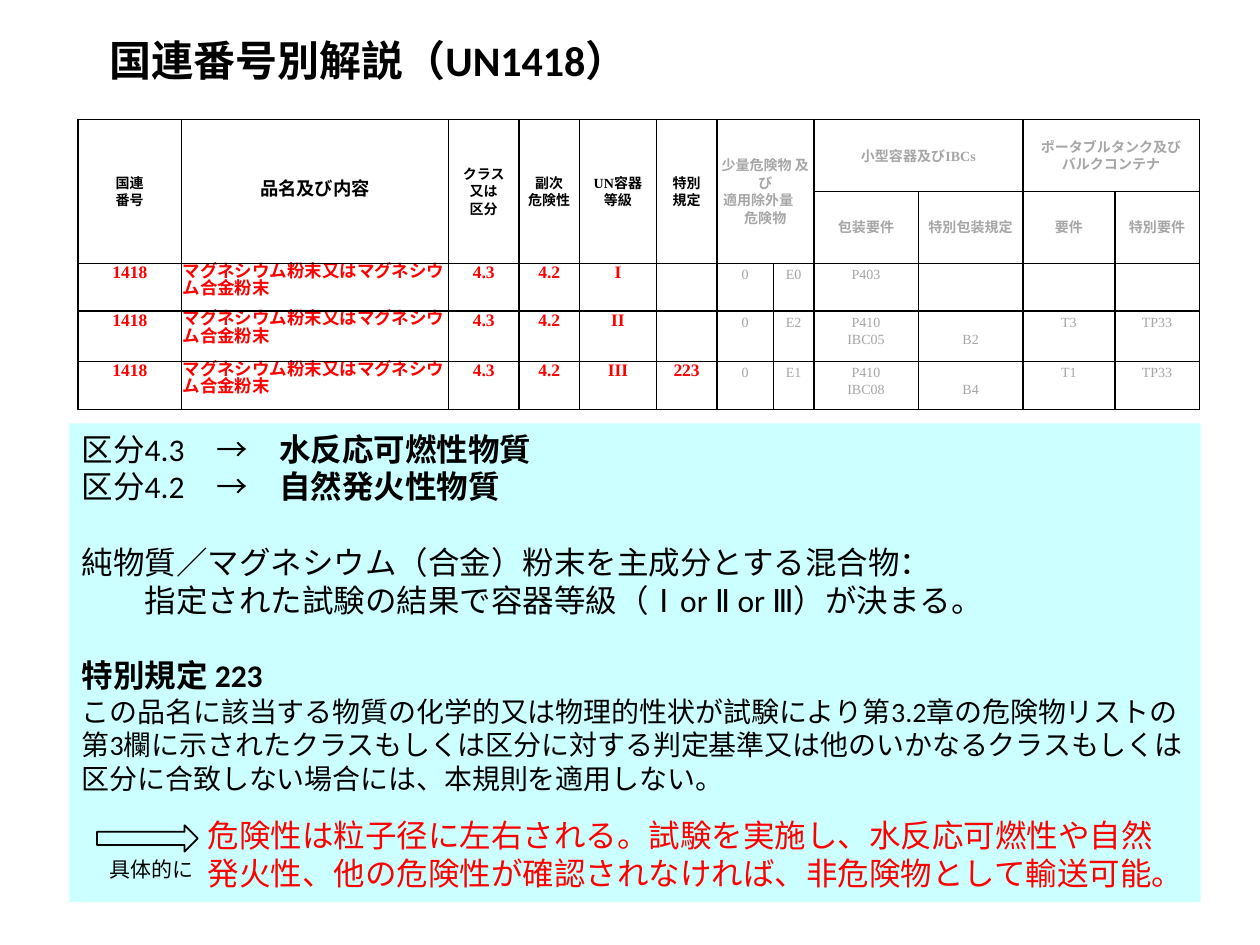
from dataclasses import dataclass

from lxml import etree
from pptx import Presentation
from pptx import util as u
from pptx.dml import color
from pptx.enum import shapes, text
from pptx.oxml import ns

COLORS = {"black": "000000", "grey": "A6A6A6", "red": "FF0000", "panel": "CCFFFF"}
SLIDE_WIDTH, SLIDE_HEIGHT = u.Inches(10), u.Inches(7.5)
LINE_PITCH = 21.6

# Percent of the slide's width and height
COLUMNS = [8.2, 21.2, 5.6, 4.8, 6.1, 4.8, 4.5, 3.2, 8.3, 8.3, 7.3, 6.7]
ROWS = [7.6, 7.6, 5.07, 5.33, 5.07]


@dataclass(frozen=True)
class Box:
    """Position and size in percent of the slide."""
    left: float
    top: float
    width: float
    height: float

    def lengths(self) -> tuple:
        return (across(self.left), down(self.top), across(self.width), down(self.height))


@dataclass(frozen=True)
class Style:
    size: float
    color: str = "black"
    bold: bool = False
    font: str = "Calibri"


@dataclass(frozen=True)
class Header:
    row: int
    column: int
    lines: tuple
    rows: int = 1
    columns: int = 1
    color: str = "black"
    size: float = 8
    before: float = 0
    after: float = 0


@dataclass(frozen=True)
class Line:
    """One paragraph of the panel, as (wording, style) runs."""
    runs: tuple
    indent: int = 0  # in full-width characters of 18 points
    before: float = 0
    after: float = 0


HEADERS = [
    Header(0, 0, ("国連", "番号"), rows=2),
    Header(0, 1, ("品名及び内容",), rows=2, size=10.5, before=2, after=3),
    Header(0, 2, ("クラス", "又は", "区分"), rows=2),
    Header(0, 3, ("副次", "危険性"), rows=2),
    Header(0, 4, ("UN容器", "等級"), rows=2),
    Header(0, 5, ("特別", "規定"), rows=2),
    Header(0, 6, ("少量危険物 及び", "適用除外量　危険物"), rows=2, columns=2, color="grey"),
    Header(0, 8, ("小型容器及びIBCs",), columns=2, color="grey"),
    Header(0, 10, ("ポータブルタンク及び", "バルクコンテナ"), columns=2, color="grey"),
] + [
    Header(1, column, (label,), color="grey")
    for column, label in enumerate(("包装要件", "特別包装規定", "要件", "特別要件"), start=8)
]

SUBSTANCE = ("1418", "マグネシウム粉末又はマグネシウム合金粉末", "4.3", "4.2")
ENTRIES = [
    SUBSTANCE + ("I", "", "0", "E0", "P403", "", "", ""),
    SUBSTANCE + ("II", "", "0", "E2", "P410\nIBC05", "\nB2", "T3", "TP33"),
    SUBSTANCE + ("III", "223", "0", "E1", "P410\nIBC08", "\nB4", "T1", "TP33"),
]
NAME_COLUMN, FIRST_GREY_COLUMN = 1, 6

PLAIN, STRONG = Style(18), Style(18, bold=True)
RED, SMALLER = Style(18, "red"), Style(16)
PANEL_LINES = [
    Line((("区分4.3　→　", PLAIN), ("水反応可燃性物質", STRONG))),
    Line((("区分4.2　→　", PLAIN), ("自然発火性物質", STRONG))),
    Line((("純物質／マグネシウム（合金）粉末を主成分とする混合物：", PLAIN),), before=LINE_PITCH),
    Line((("指定された試験の結果で容器等級（Ⅰor Ⅱ or Ⅲ）が決まる。", PLAIN),), indent=2),
    Line((("特別規定 223", STRONG),), before=LINE_PITCH),
    Line((("この品名に該当する物質の化学的又は物理的性状が試験により第3.2章の危険物リスト"
           "の第3欄に示されたクラスもしくは区分に対する判定基準又は他のいかなるクラスもし"
           "くは区分に合致しない場合には、本規則を適用しない。", SMALLER),), after=12),
    Line((("危険性は粒子径に左右される。試験を実施し、水反応可燃性や自然", RED),), indent=4),
    Line((("発火性、他の危険性が確認されなければ、非危険物として輸送可能。", RED),), indent=4),
]


def across(percent: float) -> int:
    return round(SLIDE_WIDTH * percent / 100)


def down(percent: float) -> int:
    return round(SLIDE_HEIGHT * percent / 100)


def rgb(name: str) -> color.RGBColor:
    return color.RGBColor.from_string(COLORS[name])


def add_run(paragraph, wording: str, style: Style) -> None:
    for index, part in enumerate(wording.split("\n")):
        if index:
            paragraph.add_line_break()
        if part:
            run = paragraph.add_run()
            run.text = part
            run.font.name, run.font.size = style.font, u.Pt(style.size)
            run.font.bold = style.bold
            run.font.color.rgb = rgb(style.color)


def next_paragraph(frame, index: int):
    return frame.add_paragraph() if index else frame.paragraphs[0]


def prepare_cell(cell) -> None:
    """Set black borders, no fill and narrow margins."""
    properties = cell._tc.get_or_add_tcPr()
    for side in ("lnL", "lnR", "lnT", "lnB"):
        border = etree.SubElement(properties, ns.qn(f"a:{side}"), w=str(u.Pt(1)))
        fill = etree.SubElement(border, ns.qn("a:solidFill"))
        etree.SubElement(fill, ns.qn("a:srgbClr"), val=COLORS["black"])
    cell.fill.background()
    cell.margin_left = cell.margin_right = cell.margin_top = u.Inches(0.01)
    cell.margin_bottom = 0


def write_cell(cell, lines: tuple, style: Style, align=text.PP_ALIGN.CENTER,
               before: float = 0, after: float = 0) -> None:
    for index, wording in enumerate(lines):
        paragraph = next_paragraph(cell.text_frame, index)
        paragraph.alignment = align
        paragraph.line_spacing = u.Pt(10)
        paragraph.space_before, paragraph.space_after = u.Pt(before), u.Pt(after)
        add_run(paragraph, wording, style)


def add_substance_table(slide) -> None:
    box = Box(6.2, 12.67, sum(COLUMNS), sum(ROWS))
    table = slide.shapes.add_table(len(ROWS), len(COLUMNS), *box.lengths()).table
    table.first_row = table.horz_banding = False
    for column, width in zip(table.columns, COLUMNS):
        column.width = across(width)
    for row, height in zip(table.rows, ROWS):
        row.height = down(height)
    for cell in table.iter_cells():
        prepare_cell(cell)

    for header in HEADERS:
        cell = table.cell(header.row, header.column)
        if header.rows * header.columns > 1:
            cell.merge(table.cell(header.row + header.rows - 1,
                                  header.column + header.columns - 1))
        cell.vertical_anchor = text.MSO_ANCHOR.MIDDLE
        style = Style(header.size, header.color, True, "Times New Roman")
        write_cell(cell, header.lines, style, before=header.before, after=header.after)

    key_style = Style(10, "red", True, "Times New Roman")
    grey_style = Style(8, "grey", False, "Times New Roman")
    for row, entry in enumerate(ENTRIES, start=2):
        for column, wording in enumerate(entry):
            style = key_style if column < FIRST_GREY_COLUMN else grey_style
            align = text.PP_ALIGN.LEFT if column == NAME_COLUMN else text.PP_ALIGN.CENTER
            write_cell(table.cell(row, column), (wording,), style, align)


def add_panel(slide) -> None:
    box = Box(5.5, 44.8, 89.8, 50.67)
    panel = slide.shapes.add_shape(shapes.MSO_SHAPE.RECTANGLE, *box.lengths())
    panel.shadow.inherit = False
    panel.fill.solid()
    panel.fill.fore_color.rgb = rgb("panel")
    panel.line.fill.background()
    frame = panel.text_frame
    frame.word_wrap = True
    frame.vertical_anchor = text.MSO_ANCHOR.TOP
    for index, line in enumerate(PANEL_LINES):
        paragraph = next_paragraph(frame, index)
        paragraph.alignment = text.PP_ALIGN.LEFT
        paragraph.space_before, paragraph.space_after = u.Pt(line.before), u.Pt(line.after)
        paragraph._p.get_or_add_pPr().set("marL", str(u.Pt(18 * line.indent)))
        for wording, style in line.runs:
            add_run(paragraph, wording, style)


def add_label(slide, box: Box, wording: str, style: Style, anchor, spacing: float = 1) -> None:
    frame = slide.shapes.add_textbox(*box.lengths()).text_frame
    frame.word_wrap = True
    frame.vertical_anchor = anchor
    frame.paragraphs[0].line_spacing = spacing
    add_run(frame.paragraphs[0], wording, style)


def add_arrow(slide) -> None:
    box = Box(7.7, 87.33, 8, 2.8)
    arrow = slide.shapes.add_shape(shapes.MSO_SHAPE.RIGHT_ARROW, *box.lengths())
    arrow.shadow.inherit = False
    arrow.fill.background()
    arrow.line.color.rgb = rgb("black")
    arrow.line.width = u.Pt(1)


def main() -> None:
    presentation = Presentation()
    presentation.slide_width, presentation.slide_height = SLIDE_WIDTH, SLIDE_HEIGHT
    slide = presentation.slides.add_slide(presentation.slide_layouts[6])
    add_substance_table(slide)
    add_panel(slide)
    add_label(slide, Box(7.7, 3.2, 45.2, 6.93), "国連番号別解説（UN1418）",
              Style(24, bold=True), text.MSO_ANCHOR.MIDDLE, 0.9)
    add_label(slide, Box(7.7, 90, 9.5, 4), "具体的に", Style(12), text.MSO_ANCHOR.TOP)
    add_arrow(slide)
    presentation.save("out.pptx")


if __name__ == "__main__":
    main()
